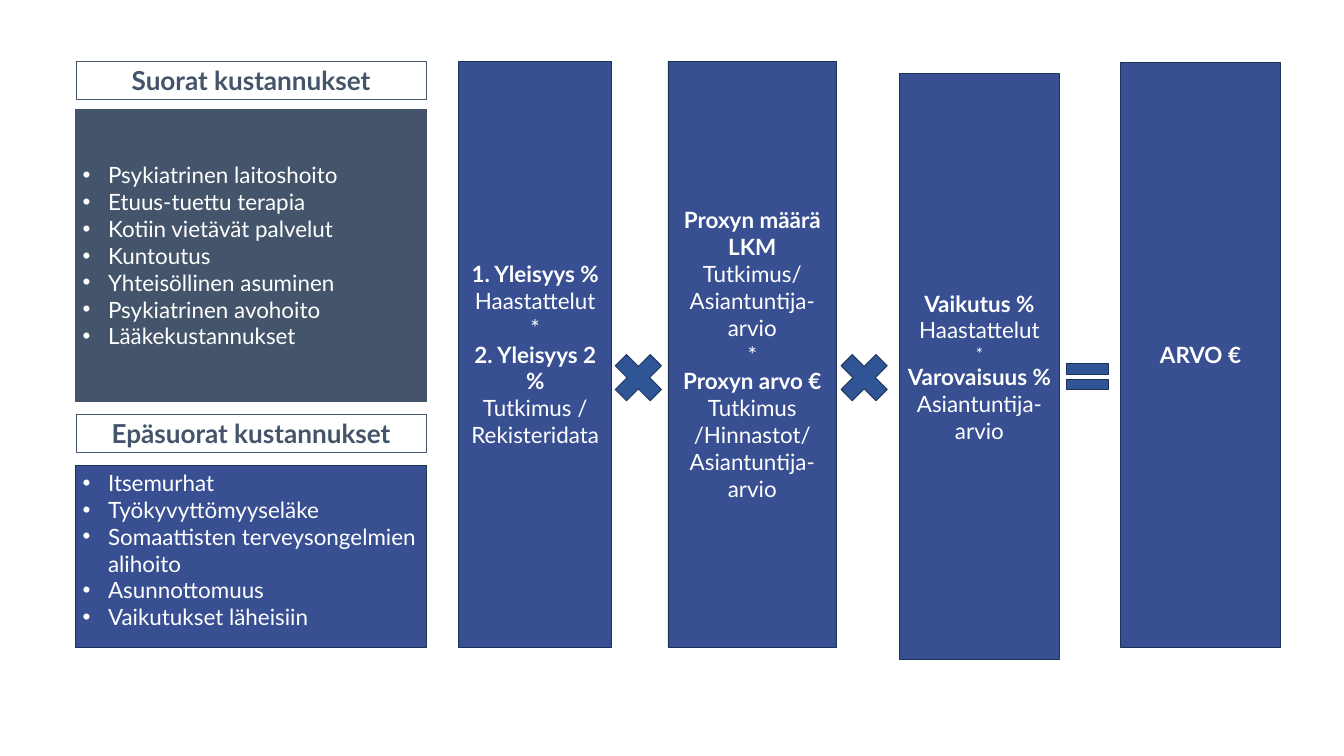
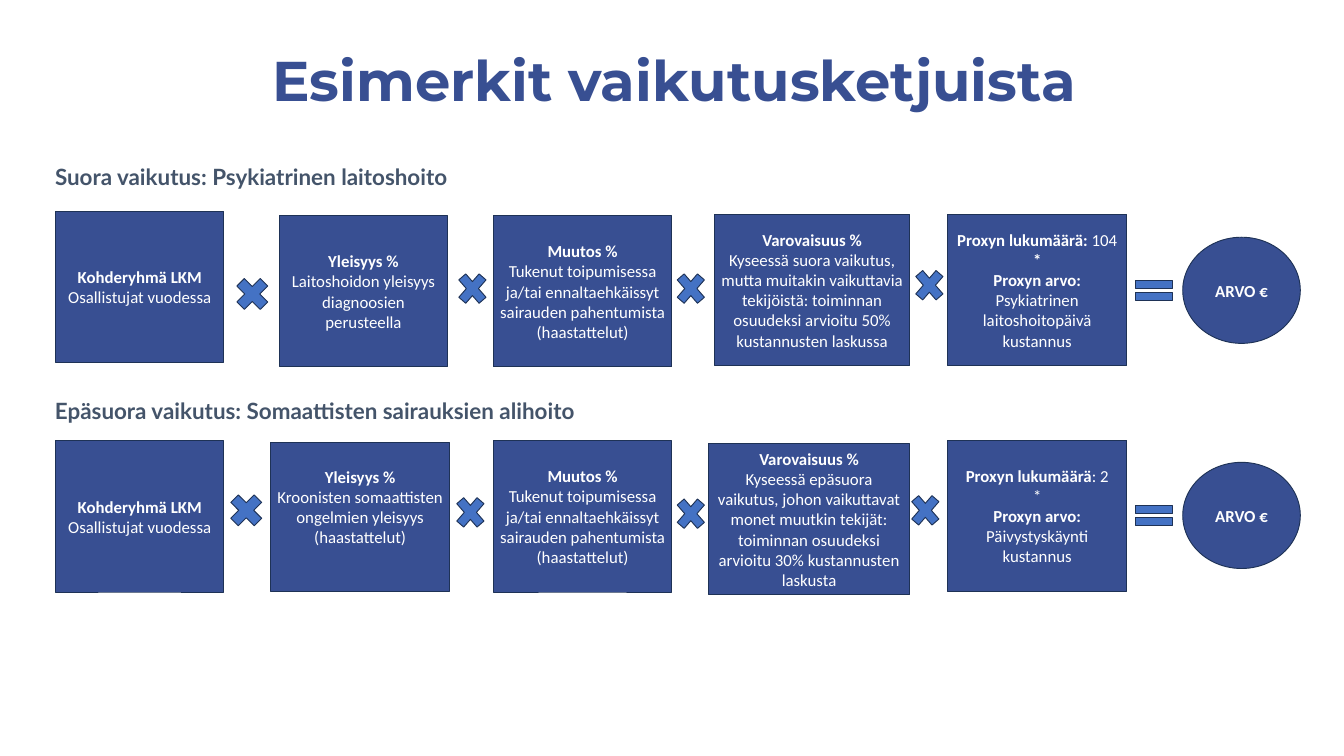
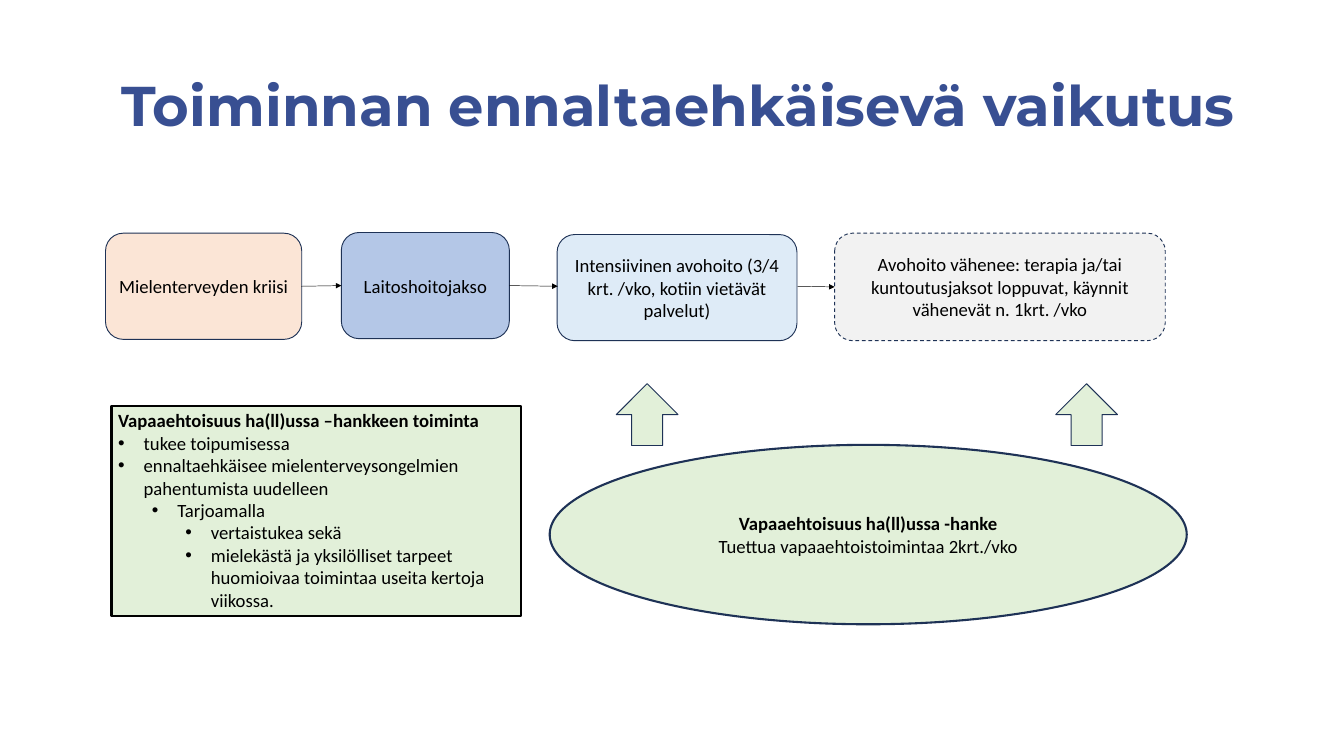
from dataclasses import dataclass

from pptx import Presentation
from pptx.dml.color import RGBColor
from pptx.enum.dml import MSO_LINE
from pptx.enum.shapes import MSO_CONNECTOR, MSO_SHAPE
from pptx.enum.text import MSO_ANCHOR, PP_ALIGN
from pptx.oxml.ns import qn
from pptx.oxml.xmlchemy import OxmlElement
from pptx.util import Inches, Pt

RECTANGLE = MSO_SHAPE.RECTANGLE
ROUNDED = MSO_SHAPE.ROUNDED_RECTANGLE
OVAL = MSO_SHAPE.OVAL
TIMES = MSO_SHAPE.MATH_MULTIPLY
EQUALS = MSO_SHAPE.MATH_EQUAL
ARROW = MSO_SHAPE.RIGHT_ARROW
LEFT, CENTER, JUSTIFY = PP_ALIGN.LEFT, PP_ALIGN.CENTER, PP_ALIGN.JUSTIFY
TOP, MIDDLE = MSO_ANCHOR.TOP, MSO_ANCHOR.MIDDLE
DASH = MSO_LINE.DASH
STRAIGHT = MSO_CONNECTOR.STRAIGHT


@dataclass(frozen=True)
class Theme:
    navy: str = "384F92"
    outline: str = "1E3256"
    slate: str = "44546A"
    operator_dark: str = "2F5597"
    operator_light: str = "4472C4"
    peach: str = "FBE5D6"
    blue: str = "B4C7E7"
    pale_blue: str = "DEEBF7"
    green: str = "E2F0D9"
    grey: str = "F2F2F2"
    white: str = "FFFFFF"
    black: str = "000000"
    title_font: str = "Montserrat"
    heading_font: str = "Lato"
    body_font: str = "Calibri"
    title_size: int = 60
    label_size: int = 28
    heading_size: int = 24
    flow_size: int = 20
    chain_size: int = 18


THEME = Theme()


@dataclass(frozen=True)
class TextStyle:
    font: str
    size: int
    color: str


MODEL_TEXT = TextStyle(THEME.heading_font, THEME.heading_size, THEME.white)
LABEL_TEXT = TextStyle(THEME.heading_font, THEME.label_size, THEME.slate)
HEADING_TEXT = TextStyle(THEME.heading_font, THEME.heading_size, THEME.slate)
CHAIN_TEXT = TextStyle(THEME.body_font, THEME.chain_size, THEME.white)
FLOW_TEXT = TextStyle(THEME.body_font, THEME.flow_size, THEME.black)
TITLE_TEXT = TextStyle(THEME.title_font, THEME.title_size, THEME.navy)


@dataclass(frozen=True)
class Line:
    """One paragraph; tail is a regular-weight ending after bold text."""
    text: str
    bold: bool = False
    tail: str = ""
    level: int | None = None
    size: int | None = None
    align: PP_ALIGN = CENTER


def bold(text, tail="", align=CENTER):
    return Line(text, True, tail, align=align)


def bullet(text, level=0):
    return Line(text, level=level, align=LEFT)


class Deck:
    def __init__(self):
        self.presentation = Presentation()
        self.presentation.slide_width = Inches(20)
        self.presentation.slide_height = Inches(11.25)
        self.slide = None

    def new_slide(self):
        blank = self.presentation.slide_layouts[6]
        self.slide = self.presentation.slides.add_slide(blank)

    def set_lines(self, frame, lines, style, anchor):
        frame.word_wrap = True
        frame.vertical_anchor = anchor
        for index, line in enumerate(lines):
            paragraph = frame.paragraphs[0] if index == 0 else frame.add_paragraph()
            paragraph.alignment = line.align
            if line.level is not None:
                self.add_bullet(paragraph, line.level)
            paragraph.font.name = style.font
            paragraph.font.size = Pt(line.size or style.size)
            paragraph.font.color.rgb = RGBColor.from_string(style.color)
            first = paragraph.add_run()
            first.text = line.text
            if line.tail:
                first.font.bold = line.bold
                ending = paragraph.add_run()
                ending.text = line.tail
                ending.font.bold = False
            else:
                paragraph.font.bold = line.bold

    def add_bullet(self, paragraph, level):
        paragraph.level = level
        properties = paragraph._p.get_or_add_pPr()
        properties.set("marL", str(Inches(0.38 + 0.5 * level)))
        properties.set("indent", str(Inches(-0.38)))
        font = OxmlElement("a:buFont")
        font.set("typeface", "Arial")
        character = OxmlElement("a:buChar")
        character.set("char", "•")
        properties.extend([font, character])

    def shape(self, kind, at, fill, lines=(), style=MODEL_TEXT, anchor=MIDDLE,
              outline=THEME.outline, weight=1, dash=None):
        shape = self.slide.shapes.add_shape(kind, *map(Inches, at))
        shape.shadow.inherit = False
        if fill:
            shape.fill.solid()
            shape.fill.fore_color.rgb = RGBColor.from_string(fill)
        else:
            shape.fill.background()
        shape.line.color.rgb = RGBColor.from_string(outline)
        shape.line.width = Pt(weight)
        if dash:
            shape.line.dash_style = dash
        if lines:
            self.set_lines(shape.text_frame, lines, style, anchor)
        return shape

    def text(self, at, line, style):
        box = self.slide.shapes.add_textbox(*map(Inches, at))
        self.set_lines(box.text_frame, [line], style, TOP)
        return box.text_frame

    def title(self, at, text):
        frame = self.text(at, bold(text), TITLE_TEXT)
        frame.margin_left = frame.margin_right = 0
        frame.margin_top = frame.margin_bottom = 0
        frame.paragraphs[0].line_spacing = Pt(72)

    def arrow(self, start, end):
        connector = self.slide.shapes.add_connector(STRAIGHT, *map(Inches, start + end))
        connector.line.color.rgb = RGBColor.from_string(THEME.black)
        connector.line.width = Pt(0.5)
        properties = connector.element.spPr
        head = OxmlElement("a:tailEnd")
        head.set("type", "triangle")
        properties.find(qn("a:ln")).append(head)
        properties.append(OxmlElement("a:effectLst"))


def build_model(deck):
    deck.new_slide()

    # Cost groups
    direct = ["Psykiatrinen laitoshoito", "Etuus-tuettu terapia", "Kotiin vietävät palvelut",
              "Kuntoutus", "Yhteisöllinen asuminen", "Psykiatrinen avohoito",
              "Lääkekustannukset"]
    indirect = ["Itsemurhat", "Työkyvyttömyyseläke", "Somaattisten terveysongelmien alihoito",
                "Asunnottomuus", "Vaikutukset läheisiin"]
    deck.shape(RECTANGLE, (1.13, 1.63, 5.22, 4.34), THEME.slate, map(bullet, direct),
               outline=THEME.slate)
    deck.shape(RECTANGLE, (1.13, 6.93, 5.22, 2.7), THEME.navy, map(bullet, indirect),
               anchor=TOP)
    for top, label in [(0.91, "Suorat kustannukset"), (6.16, "Epäsuorat kustannukset")]:
        deck.shape(RECTANGLE, (1.13, top, 5.21, 0.57), None, [bold(label)], LABEL_TEXT,
                   TOP, THEME.slate, 0.75)

    # Factors
    factors = [
        ((6.83, 0.91, 2.27, 8.72),
         [bold("1. Yleisyys %"), Line("Haastattelut"), Line("*"),
          bold("2. Yleisyys 2 %"), Line("Tutkimus / Rekisteridata")]),
        ((9.94, 0.91, 2.51, 8.72),
         [bold("Proxyn määrä LKM"), Line("Tutkimus/ Asiantuntija-arvio"), Line("*"),
          bold("Proxyn arvo €"), Line("Tutkimus /Hinnastot/ Asiantuntija-arvio")]),
        ((13.39, 1.1, 2.37, 8.72),
         [bold("Vaikutus %"), Line("Haastattelut"), Line("*", size=THEME.chain_size),
          bold("Varovaisuus %"), Line("Asiantuntija-arvio")]),
        ((16.68, 0.93, 2.37, 8.7), [bold("ARVO €")]),
    ]
    for at, lines in factors:
        deck.shape(RECTANGLE, at, THEME.navy, lines)

    # Operators
    for left in (9, 12.36):
        deck.shape(TIMES, (left, 5.12, 1, 1), THEME.operator_dark)
    deck.shape(EQUALS, (15.76, 5.27, 0.84, 0.67), THEME.operator_dark)


def build_chain(deck, heading_at, heading, boxes, operators, equals_top, value_top):
    deck.text(heading_at, Line(heading, True, align=LEFT), HEADING_TEXT)
    shapes = [deck.shape(RECTANGLE, at, THEME.navy, lines, CHAIN_TEXT) for at, lines in boxes]
    for index, (left, top) in enumerate(operators):
        width = 0.67 if index == 0 else 0.58
        deck.shape(TIMES, (left, top, width, 0.67), THEME.operator_light)
    deck.shape(EQUALS, (16.8, equals_top, 0.75, 0.51), THEME.operator_light)
    deck.shape(OVAL, (17.6, value_top, 1.75, 1.58), THEME.navy, [bold("ARVO €")], CHAIN_TEXT)
    return shapes


def build_examples(deck):
    deck.new_slide()
    deck.title((0.72, 0.67, 18.63, 1.01), "Esimerkit vaikutusketjuista")
    target = [bold("Kohderyhmä LKM"), Line("Osallistujat vuodessa")]
    change = [bold("Muutos %"),
              Line("Tukenut toipumisessa ja/tai ennaltaehkäissyt sairauden pahentumista "
                   "(haastattelut)")]

    # Direct impact
    boxes = [
        ((0.83, 3.14, 2.5, 2.25), target),
        ((4.16, 3.21, 2.5, 2.25),
         [bold("Yleisyys %"), Line("Laitoshoidon yleisyys diagnoosien perusteella")]),
        ((7.34, 3.21, 2.66, 2.25), change),
        ((10.63, 3.19, 2.91, 2.25),
         [bold("Varovaisuus %"),
          Line("Kyseessä suora vaikutus, mutta muitakin vaikuttavia tekijöistä: toiminnan "
               "osuudeksi arvioitu 50% kustannusten laskussa")]),
        ((14.1, 3.19, 2.67, 2.25),
         [bold("Proxyn lukumäärä: ", "104"), bold("*"), bold("Proxyn arvo:"),
          Line("Psykiatrinen laitoshoitopäivä kustannus")]),
    ]
    build_chain(deck, (0.72, 2.38, 6.28, 0.5), "Suora vaikutus: Psykiatrinen laitoshoito",
                boxes, [(3.42, 4.04), (6.74, 3.96), (9.99, 3.96), (13.54, 3.91)], 4.07, 3.53)

    # Indirect impact
    boxes = [
        ((0.83, 6.56, 2.5, 2.25), target),
        ((4.03, 6.58, 2.66, 2.22),
         [bold("Yleisyys %"),
          Line("Kroonisten somaattisten ongelmien yleisyys (haastattelut)")]),
        ((7.34, 6.56, 2.66, 2.25), change),
        ((10.54, 6.6, 3, 2.25),
         [bold("Varovaisuus %"),
          Line("Kyseessä epäsuora vaikutus, johon vaikuttavat monet muutkin tekijät: "
               "toiminnan osuudeksi arvioitu 30% kustannusten laskusta")]),
        ((14.1, 6.55, 2.67, 2.25),
         [bold("Proxyn lukumäärä", ": 2"), Line("*"),
          bold("Proxyn arvo: ", "Päivystyskäynti kustannus")]),
    ]
    shapes = build_chain(
        deck, (0.72, 5.86, 8.03, 0.5), "Epäsuora vaikutus: Somaattisten sairauksien alihoito",
        boxes, [(3.33, 7.26), (6.71, 7.29), (9.99, 7.31), (13.48, 7.26)], 7.42, 6.88)
    shapes[1].text_frame.margin_bottom = Inches(0.35)


def build_prevention(deck):
    deck.new_slide()
    deck.title((1.58, 1.05, 17.02, 1.01), "Toiminnan ennaltaehkäisevä vaikutus")

    # Care path
    steps = [
        ((1.57, 3.47, 2.92, 1.58), THEME.peach, "Mielenterveyden kriisi", None),
        ((5.08, 3.46, 2.5, 1.58), THEME.blue, "Laitoshoitojakso", None),
        ((8.29, 3.49, 3.57, 1.58), THEME.pale_blue,
         "Intensiivinen avohoito (3/4 krt. /vko, kotiin vietävät palvelut)", None),
        ((12.42, 3.47, 4.92, 1.6), THEME.grey,
         "Avohoito vähenee: terapia ja/tai kuntoutusjaksot loppuvat, käynnit vähenevät "
         "n. 1krt. /vko", DASH),
    ]
    for at, fill, text, dash in steps:
        deck.shape(ROUNDED, at, fill, [Line(text)], FLOW_TEXT, dash=dash)
    deck.arrow((4.48, 4.26), (5.08, 4.25))
    deck.arrow((7.58, 4.25), (8.3, 4.26))
    deck.arrow((11.87, 4.26), (12.42, 4.27))

    # Volunteer project
    deck.shape(OVAL, (8.18, 6.62, 9.48, 2.67), THEME.green,
               [bold("Vapaaehtoisuus ha(ll)ussa -hanke"),
                Line("Tuettua vapaaehtoistoimintaa 2krt./vko")], FLOW_TEXT, weight=2.25)
    for left in (9.17, 15.71):
        deck.shape(ARROW, (left, 5.71, 0.92, 0.92), THEME.green).rotation = 270
    activities = [
        bold("Vapaaehtoisuus ha(ll)ussa –hankkeen toiminta", align=JUSTIFY),
        bullet("tukee toipumisessa"),
        bullet("ennaltaehkäisee mielenterveysongelmien pahentumista uudelleen"),
        bullet("Tarjoamalla", 1),
        bullet("vertaistukea sekä", 2),
        bullet("mielekästä ja yksilölliset tarpeet huomioivaa toimintaa useita kertoja "
               "viikossa.", 2),
    ]
    deck.shape(RECTANGLE, (1.66, 6.04, 6.09, 3.13), THEME.green, activities, FLOW_TEXT,
               TOP, THEME.black, 2.25)


def main():
    deck = Deck()
    build_model(deck)
    build_examples(deck)
    build_prevention(deck)
    deck.presentation.save("out.pptx")


if __name__ == "__main__":
    main()
